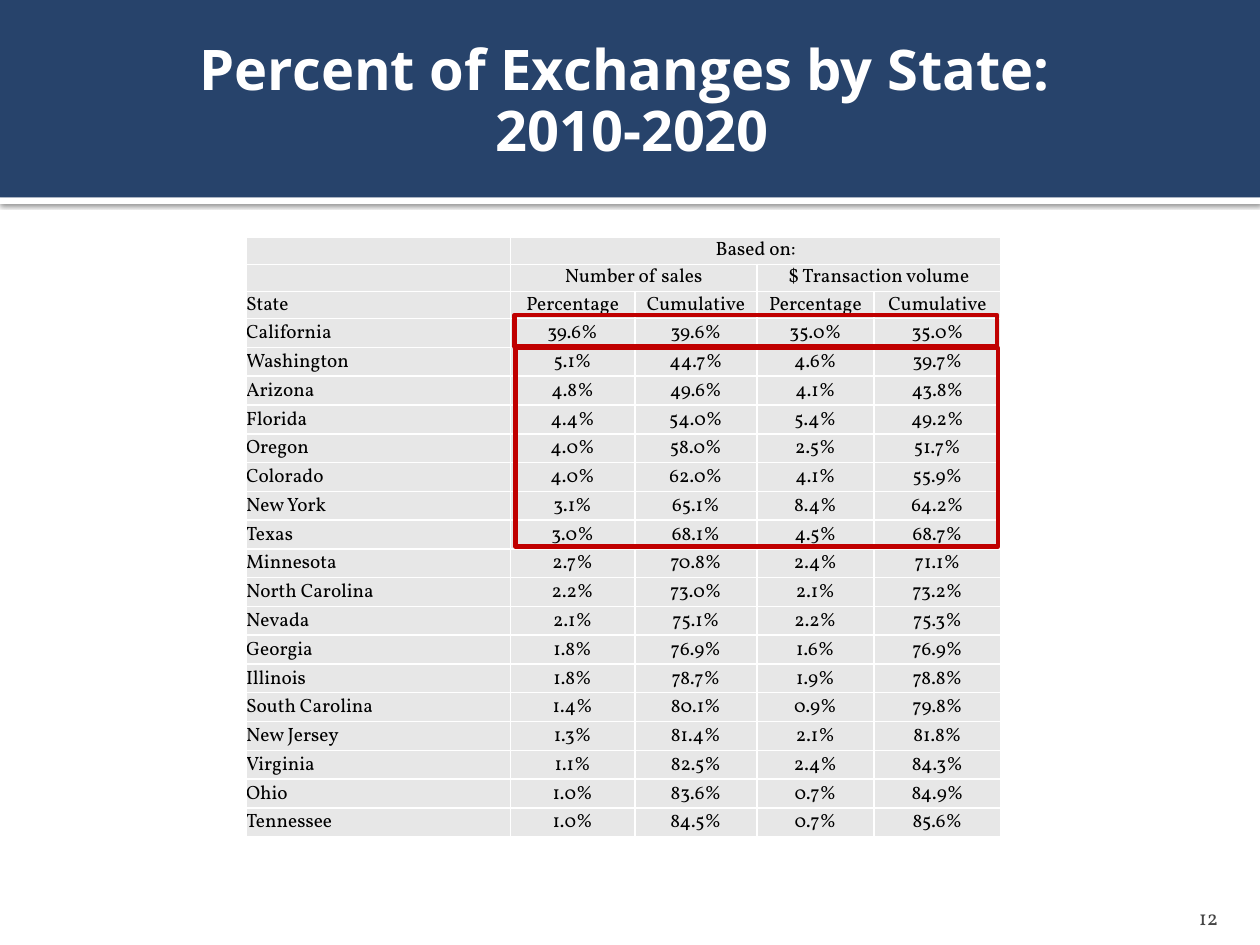
from dataclasses import dataclass
from lxml import etree
from pptx import Presentation, util as u
from pptx.dml.color import RGBColor
from pptx.enum import shapes, text
from pptx.oxml import ns, parse_xml


@dataclass(frozen=True)
class Theme:
    navy: str = "27436B"
    white: str = "FFFFFF"
    gray: str = "E7E7E7"
    ink: str = "000000"
    dim: str = "454545"
    red: str = "C00000"
    head: str = "Open Sans"
    body: str = "Vollkorn"
    big: int = 32
    small: int = 11
    page: int = 12


@dataclass(frozen=True)
class Box:
    x: float
    y: float
    w: float
    h: float

    def inner(self, x, y, w, h):
        return Box(self.x + x, self.y + y, w, h)

    def cm(self):
        return [u.Cm(v) for v in (self.x, self.y, self.w, self.h)]


T = Theme()
LEFT, MID, RIGHT = text.PP_ALIGN.LEFT, text.PP_ALIGN.CENTER, text.PP_ALIGN.RIGHT
COLS = [5.33, 2.51, 2.46, 2.36, 2.56]
HEAD, ROW = 0.54, 0.58
SPANS = [(0, 1, 4), (1, 1, 2), (1, 3, 4)]
ROWS = [
    ["", "Based on:", "", "", ""],
    ["", "Number of sales", "", "$ Transaction volume", ""],
    ["State", "Percentage", "Cumulative", "Percentage", "Cumulative"],
    ["California", "39.6%", "39.6%", "35.0%", "35.0%"],
    ["Washington", "5.1%", "44.7%", "4.6%", "39.7%"],
    ["Arizona", "4.8%", "49.6%", "4.1%", "43.8%"],
    ["Florida", "4.4%", "54.0%", "5.4%", "49.2%"],
    ["Oregon", "4.0%", "58.0%", "2.5%", "51.7%"],
    ["Colorado", "4.0%", "62.0%", "4.1%", "55.9%"],
    ["New York", "3.1%", "65.1%", "8.4%", "64.2%"],
    ["Texas", "3.0%", "68.1%", "4.5%", "68.7%"],
    ["Minnesota", "2.7%", "70.8%", "2.4%", "71.1%"],
    ["North Carolina", "2.2%", "73.0%", "2.1%", "73.2%"],
    ["Nevada", "2.1%", "75.1%", "2.2%", "75.3%"],
    ["Georgia", "1.8%", "76.9%", "1.6%", "76.9%"],
    ["Illinois", "1.8%", "78.7%", "1.9%", "78.8%"],
    ["South Carolina", "1.4%", "80.1%", "0.9%", "79.8%"],
    ["New Jersey", "1.3%", "81.4%", "2.1%", "81.8%"],
    ["Virginia", "1.1%", "82.5%", "2.4%", "84.3%"],
    ["Ohio", "1.0%", "83.6%", "0.7%", "84.9%"],
    ["Tennessee", "1.0%", "84.5%", "0.7%", "85.6%"],
]


def rgb(code):
    return RGBColor.from_string(code)


def add_run(para, words, face, size, color, bold=False):
    run = para.add_run()
    run.text = words
    run.font.name = face
    run.font.size = u.Pt(size)
    run.font.bold = bold
    run.font.color.rgb = rgb(color)


def add_rect(slide, box, fill=None, line=None):
    rect = slide.shapes.add_shape(shapes.MSO_SHAPE.RECTANGLE, *box.cm())
    rect.shadow.inherit = False
    if fill:
        rect.fill.solid()
        rect.fill.fore_color.rgb = rgb(fill)
    else:
        rect.fill.background()
    if line:
        rect.line.color.rgb = rgb(line)
        rect.line.width = u.Pt(2.5)
    else:
        rect.line.fill.background()
    return rect


def set_frame(frame, anchor, left, top, right, foot):
    frame.word_wrap = True
    frame.auto_size = text.MSO_AUTO_SIZE.NONE
    frame.vertical_anchor = anchor
    frame.margin_left, frame.margin_top = u.Cm(left), u.Cm(top)
    frame.margin_right, frame.margin_bottom = u.Cm(right), u.Cm(foot)


def add_shade(shape):
    glow = shape.element.spPr.find(ns.qn("a:effectLst"))
    glow.append(parse_xml(
        f'<a:outerShdw {ns.nsdecls("a")} blurRad="{u.Pt(2.5)}" dist="{u.Pt(0.8)}" '
        f'dir="5400000" algn="t" rotWithShape="0"><a:srgbClr val="{T.ink}">'
        '<a:alpha val="60000"/></a:srgbClr></a:outerShdw>'))


def add_banner(slide, box):
    add_shade(add_rect(slide, box.inner(0, box.h, box.w, 0.13), T.white))
    add_rect(slide, box, T.navy)
    title = slide.shapes.title
    slide.shapes.element.append(title.element)
    title.left, title.top, title.width, title.height = box.inner(0.84, 0.33, 23.7, 3.48).cm()
    set_frame(title.text_frame, text.MSO_ANCHOR.MIDDLE, 0.25, 0.13, 0.13, 0.13)
    para = title.text_frame.paragraphs[0]
    para.alignment = MID
    para.line_spacing = 0.9
    add_run(para, "Percent of Exchanges by State: ", T.head, T.big, T.white, True)
    para.add_line_break()
    add_run(para, "2010-2020", T.head, T.big, T.white, True)


def add_edges(cell):
    props = cell._tc.get_or_add_tcPr()
    for side in ("lnL", "lnR", "lnT", "lnB"):
        line = etree.SubElement(props, ns.qn(f"a:{side}"), w=str(u.Pt(1)))
        fill = etree.SubElement(line, ns.qn("a:solidFill"))
        etree.SubElement(fill, ns.qn("a:srgbClr"), val=T.white)


def fill_cell(cell, words, align):
    add_edges(cell)
    cell.fill.solid()
    cell.fill.fore_color.rgb = rgb(T.gray)
    cell.vertical_anchor = text.MSO_ANCHOR.BOTTOM
    cell.margin_left = cell.margin_right = cell.margin_top = cell.margin_bottom = 0
    para = cell.text_frame.paragraphs[0]
    para.alignment = align
    if words:
        add_run(para, words, T.body, T.small, T.ink)
    else:
        etree.SubElement(para._p, ns.qn("a:endParaRPr"), sz=str(T.small * 100))


def add_grid(slide, box):
    grid = slide.shapes.add_table(len(ROWS), len(COLS), *box.cm()).table
    for col, wide in zip(grid.columns, COLS):
        col.width = u.Cm(wide)
    for r, row in enumerate(ROWS):
        grid.rows[r].height = u.Cm(HEAD if r < 3 else ROW)
        for c, words in enumerate(row):
            fill_cell(grid.cell(r, c), words, MID if c else LEFT)
    for r, start, end in SPANS:
        grid.cell(r, start).merge(grid.cell(r, end))


def add_marks(slide, box):
    add_rect(slide, box.inner(0, 0, 9.73, 0.64), line=T.red)
    add_rect(slide, box.inner(0.02, 0.66, 9.73, 4.01), line=T.red)


def add_page(slide, box):
    frame = slide.shapes.add_textbox(*box.cm()).text_frame
    set_frame(frame, text.MSO_ANCHOR.BOTTOM, 0.25, 0.13, 0.25, 0)
    para = frame.paragraphs[0]
    para.alignment = RIGHT
    add_run(para, "12", T.body, T.page, T.dim)


def main():
    deck = Presentation()
    deck.slide_width, deck.slide_height = u.Cm(25.4), u.Cm(19.05)
    slide = deck.slides.add_slide(deck.slide_layouts[5])
    add_banner(slide, Box(0, 0, 25.4, 3.98))
    add_page(slide, Box(22.78, 17.98, 2.03, 0.76))
    add_grid(slide, Box(4.96, 4.78, sum(COLS), 3 * HEAD + (len(ROWS) - 3) * ROW))
    add_marks(slide, Box(10.37, 6.35, 9.75, 4.67))
    deck.save("out.pptx")


if __name__ == "__main__":
    main()
